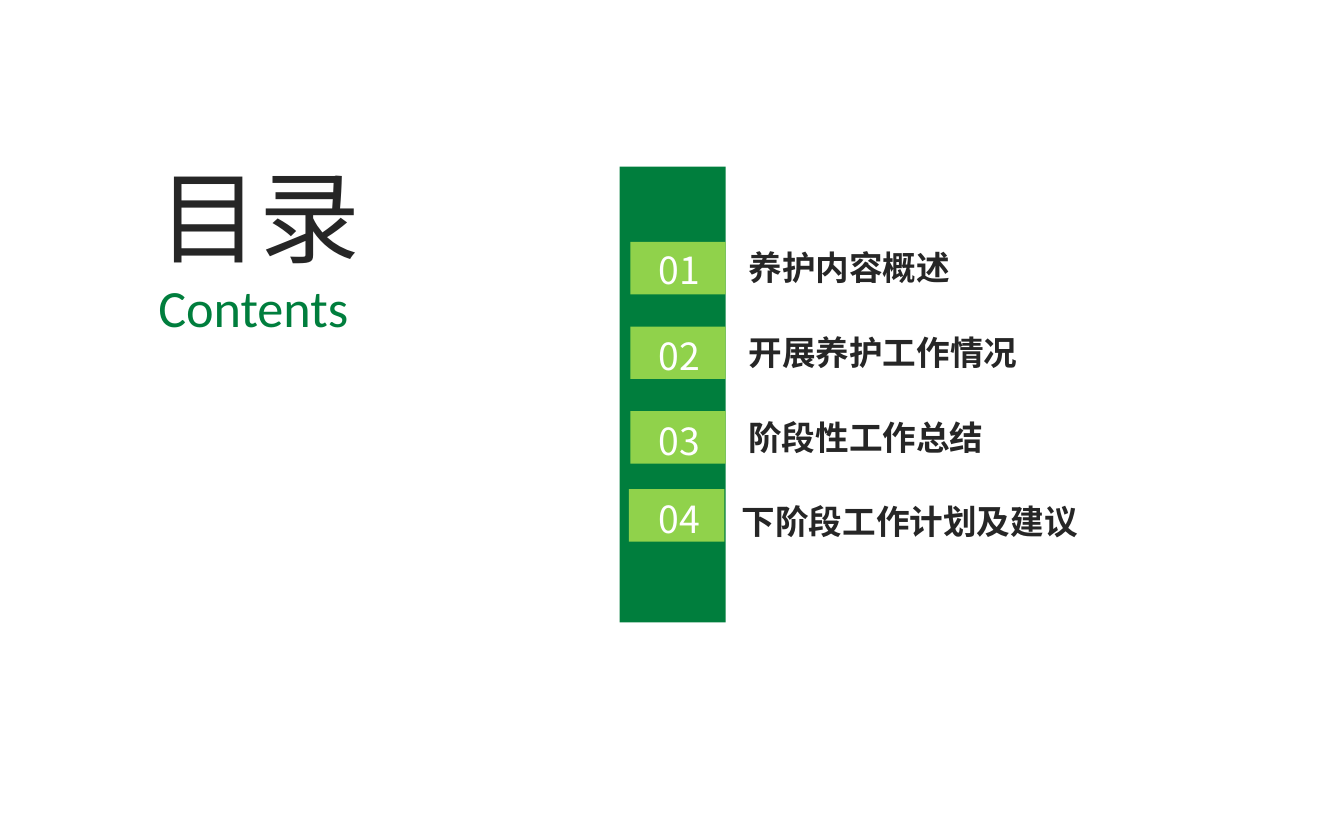
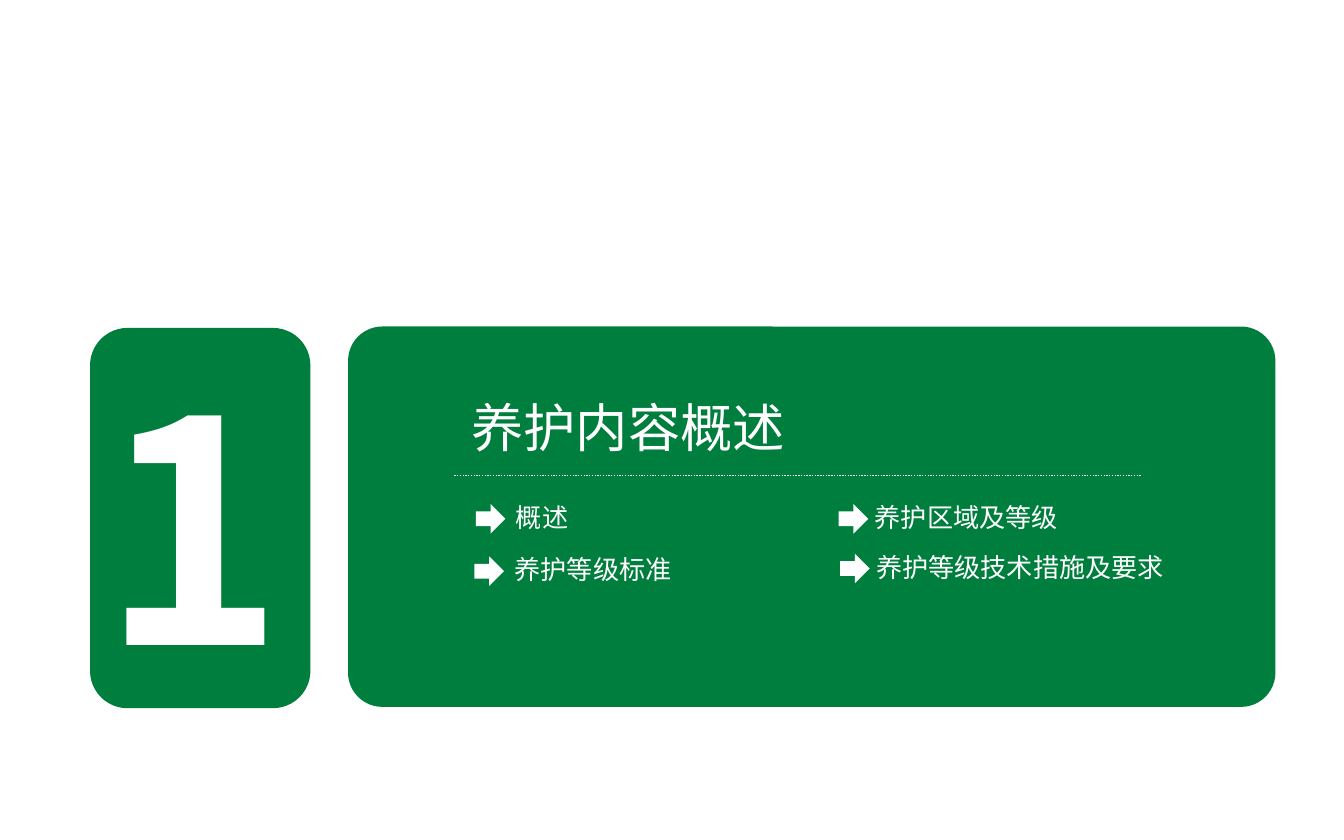
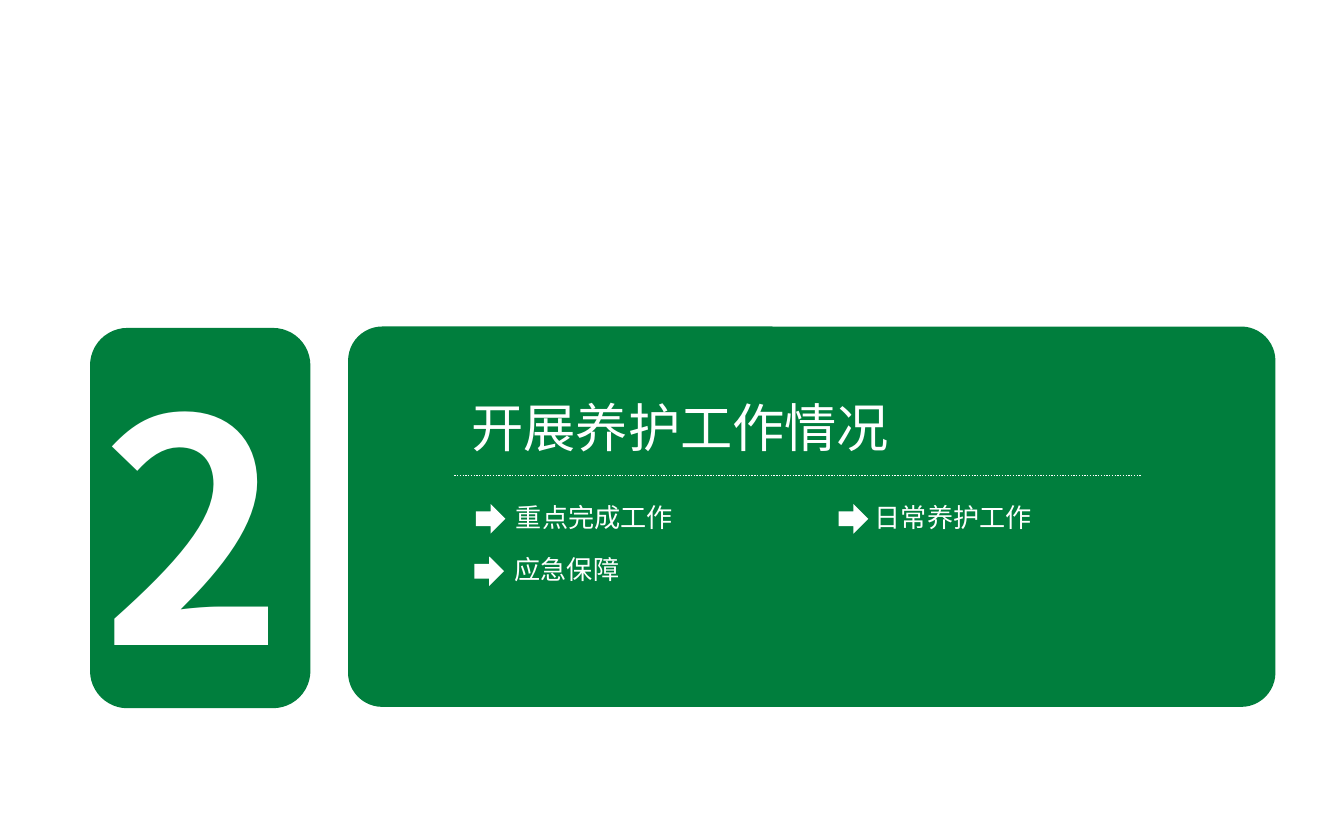
import dataclasses
import typing

import lxml.etree
import pptx
import pptx.dml.color
import pptx.enum.dml
import pptx.enum.shapes
import pptx.enum.text
import pptx.oxml.ns
import pptx.slide
import pptx.util

Inches = pptx.util.Inches
RGBColor = pptx.dml.color.RGBColor
Shape = pptx.enum.shapes.MSO_SHAPE

GREEN = RGBColor(0x00, 0x7E, 0x3D)
LIME = RGBColor(0x90, 0xD2, 0x4B)
INK = RGBColor(0x26, 0x26, 0x26)
WHITE = RGBColor(0xFF, 0xFF, 0xFF)
NOTO = "Noto Sans CJK SC"
LATIN = "Calibri"


class Box(typing.NamedTuple):
    left: float
    top: float
    width: float
    height: float

    def lengths(self) -> list[pptx.util.Length]:
        return [Inches(side) for side in self]


@dataclasses.dataclass(frozen=True)
class Style:
    size: int
    color: RGBColor = WHITE
    font: str = NOTO
    bold: bool = False
    wrap: bool = False


@dataclasses.dataclass(frozen=True)
class Entry:
    label: str
    left: float
    width: float
    tile: Box
    top: float


@dataclasses.dataclass(frozen=True)
class Topic:
    label: str
    width: float
    font: str = LATIN


@dataclasses.dataclass(frozen=True)
class Section:
    number: str
    title: str
    topics: tuple[Topic, ...]


HEAD = Style(54, INK)
SUBHEAD = Style(28, GREEN, LATIN)
INDEX = Style(20)
LABEL = Style(18, INK, bold=True)
DIGIT = Style(166, bold=True)
TITLE = Style(28, wrap=True)

STEP = 0.63
ENTRIES = (
    Entry("养护内容概述", 5.47, 1.72, Box(4.69, 1.8, 0.71, 0.39), 1.79),
    Entry("开展养护工作情况", 5.47, 2.22, Box(4.69, 2.43, 0.71, 0.39), 2.43),
    Entry("阶段性工作总结", 5.47, 1.97, Box(4.69, 3.06, 0.71, 0.39), 3.06),
    Entry("下阶段工作计划及建议", 5.42, 2.73, Box(4.68, 3.64, 0.71, 0.39), 3.64),
)
SPOTS = ((3.54, 3.75), (6.24, 3.75), (3.53, 4.14), (6.25, 4.12))
SECTIONS = (
    Section("1", "养护内容概述", (
        Topic("概述", 0.59),
        Topic("养护区域及等级", 1.58),
        Topic("养护等级标准", 1.38),
        Topic("养护等级技术措施及要求", 2.36, NOTO),
    )),
    Section("2", "开展养护工作情况", (
        Topic("重点完成工作", 1.38),
        Topic("日常养护工作", 1.38),
        Topic("应急保障", 0.99),
    )),
)


def add_block(slide: pptx.slide.Slide, kind: Shape, box: Box, fill: RGBColor,
              curve: float | None = None) -> None:
    block = slide.shapes.add_shape(kind, *box.lengths())
    block.shadow.inherit = False
    block.fill.solid()
    block.fill.fore_color.rgb = fill
    block.line.fill.background()
    if curve is not None:
        block.adjustments[0] = curve


def add_text(slide: pptx.slide.Slide, box: Box, text: str, style: Style) -> None:
    frame = slide.shapes.add_textbox(*box.lengths()).text_frame
    frame.word_wrap = style.wrap
    frame.auto_size = pptx.enum.text.MSO_AUTO_SIZE.SHAPE_TO_FIT_TEXT
    run = frame.paragraphs[0].add_run()
    run.text = text
    font = run.font
    font.size = pptx.util.Pt(style.size)
    font.bold = style.bold
    font.color.rgb = style.color
    font.name = style.font
    lxml.etree.SubElement(run._r.get_or_add_rPr(), pptx.oxml.ns.qn("a:ea"), typeface=NOTO)


def add_rule(slide: pptx.slide.Slide, start: float, end: float, top: float) -> None:
    rule = slide.shapes.add_connector(
        pptx.enum.shapes.MSO_CONNECTOR.STRAIGHT,
        Inches(start), Inches(top), Inches(end), Inches(top))
    rule.line.color.rgb = WHITE
    rule.line.width = pptx.util.Pt(0.75)
    rule.line.dash_style = pptx.enum.dml.MSO_LINE.ROUND_DOT
    lxml.etree.SubElement(rule._element.spPr, pptx.oxml.ns.qn("a:effectLst"))


def draw_index(slide: pptx.slide.Slide) -> None:
    add_text(slide, Box(1.08, 2, 1.66, 0.57), "Contents", SUBHEAD)
    add_text(slide, Box(1.08, 1.1, 1.72, 1.01), "目录", HEAD)
    add_block(slide, Shape.RECTANGLE, Box(4.61, 1.24, 0.79, 3.39), GREEN)
    for place, entry in enumerate(ENTRIES):
        add_block(slide, Shape.RECTANGLE, entry.tile, LIME)
        add_text(slide, Box(4.8, entry.top, 0.53, 0.44), f"{place + 1:02}", INDEX)
        spot = Box(entry.left, 1.79 + place * STEP, entry.width, 0.4)
        add_text(slide, spot, entry.label, LABEL)


def draw_section(slide: pptx.slide.Slide, section: Section) -> None:
    add_block(slide, Shape.ROUNDED_RECTANGLE, Box(0.67, 2.44, 1.64, 2.83), GREEN, 0.17)
    add_block(slide, Shape.ROUNDED_RECTANGLE, Box(2.59, 2.43, 6.9, 2.83), GREEN, 0.09)
    add_text(slide, Box(0.66, 2.45, 1.64, 2.89), section.number, DIGIT)
    add_text(slide, Box(3.41, 2.89, 3.33, 0.57), section.title, TITLE)
    add_rule(slide, 3.38, 8.49, 3.54)
    for (left, top), topic in zip(SPOTS, section.topics):
        add_block(slide, Shape.RIGHT_ARROW, Box(left, top, 0.22, 0.22), WHITE)
        inset = 0.2 if left < 5 else 0.17
        spot = Box(left + inset, top - 0.07, topic.width, 0.34)
        add_text(slide, spot, topic.label, Style(14, font=topic.font))


def main() -> None:
    deck = pptx.Presentation()
    deck.slide_width, deck.slide_height = Inches(10), Inches(6.25)
    blank = deck.slide_layouts[6]
    draw_index(deck.slides.add_slide(blank))
    for section in SECTIONS:
        draw_section(deck.slides.add_slide(blank), section)
    deck.save("out.pptx")


if __name__ == "__main__":
    main()
